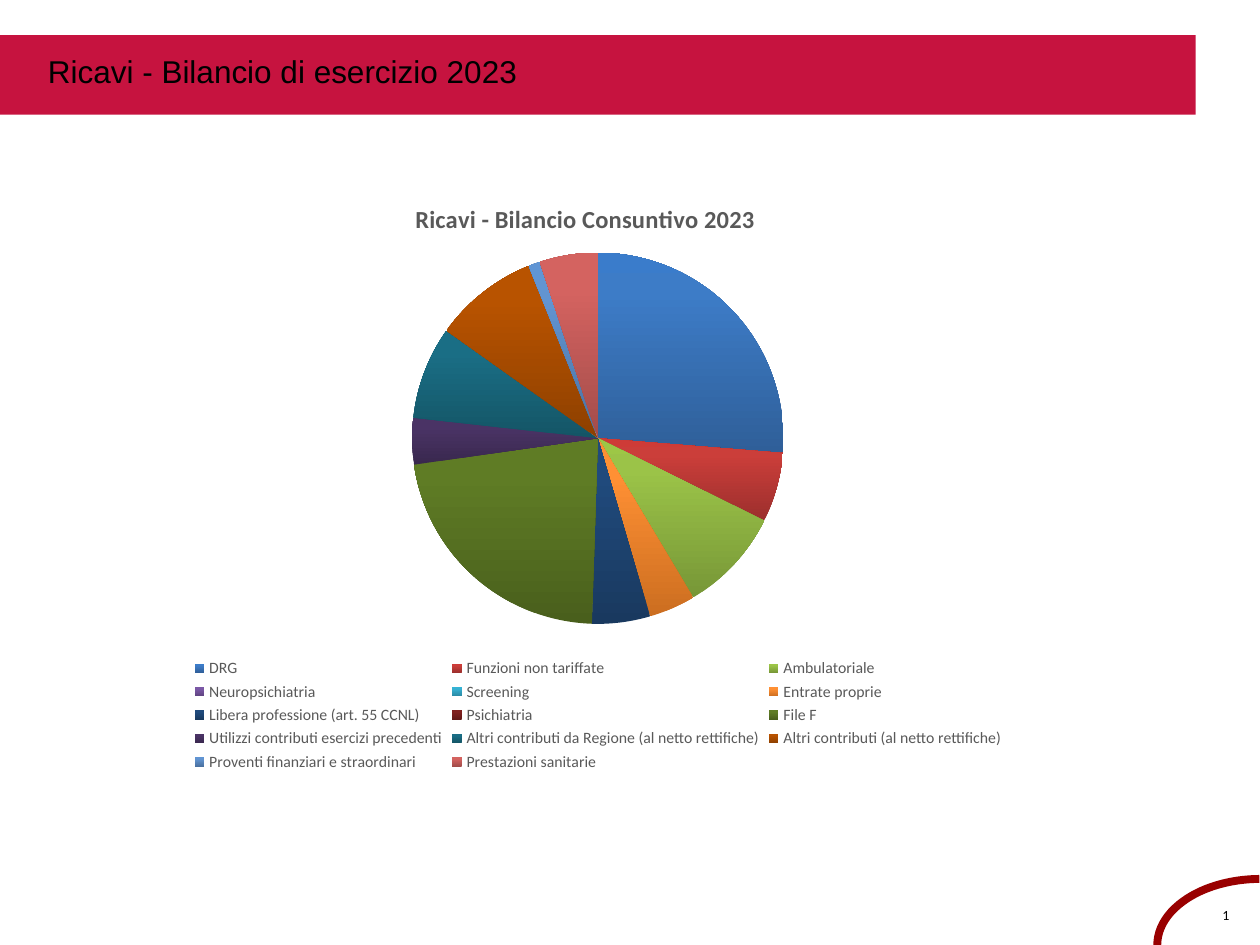
from copy import deepcopy

from lxml import etree
from pptx import Presentation
from pptx.chart.data import CategoryChartData
from pptx.dml.color import RGBColor
from pptx.enum.chart import XL_CHART_TYPE, XL_LEGEND_POSITION
from pptx.enum.shapes import MSO_SHAPE
from pptx.enum.text import MSO_ANCHOR, PP_ALIGN
from pptx.oxml import parse_xml
from pptx.oxml.ns import nsdecls, qn
from pptx.util import Inches, Pt

PIE = XL_CHART_TYPE.PIE
BOTTOM = XL_LEGEND_POSITION.BOTTOM
RECT, ARC = MSO_SHAPE.RECTANGLE, MSO_SHAPE.ARC
TOP, LEFT, CENTER = MSO_ANCHOR.TOP, PP_ALIGN.LEFT, PP_ALIGN.CENTER

THEME = {
    "bar": "C6133F", "arc": "990000", "text": "000000", "muted": "595959",
    "heading_font": "Arial", "body_font": "Calibri",
    "title": 18, "chart_title": 14, "chart": 10, "legend": 9, "page": 8,
}

# Category, value, gradient colours from bottom to top
REVENUES = [
    ("DRG", 26, "2F5F99 3D7CC7 3A7CCB"),
    ("Funzioni non tariffate", 6, "9C2F2D CB3E3A CE3B37"),
    ("Ambulatoriale", 9, "779737 9BC348 9DC746"),
    ("Neuropsichiatria", 0, "5F4480 7B58A6 7C57A8"),
    ("Screening", 0, "2A88A2 37B1D2 34B4D6"),
    ("Entrate proprie", 4, "CC6E20 FF9034 FF9136"),
    ("Libera professione (art. 55 CCNL)", 5, "19395F 204A7C 1E4A7E"),
    ("Psichiatria", 0, "621917 7F201E 811F1C"),
    ("File F", 22, "495F1C 5F7C25 607E23"),
    ("Utilizzi contributi esercizi precedenti", 4, "39284E 4A3365 4A3366"),
    ("Altri contributi da Regione (al netto rettifiche)", 8, "145566 1A6E85 187088"),
    ("Altri contributi (al netto rettifiche)", 9, "8E4000 B85300 B95400"),
    ("Proventi finanziari e straordinari", 1, "4B72A1 6294D1 6095D4"),
    ("Prestazioni sanitarie", 5, "A34C4A D46360 D7615E"),
]
STOPS = (0, 0.8, 1)


def set_font(font, size, color, name=THEME["body_font"], bold=False):
    font.size, font.name, font.bold = Pt(size), name, bold
    font.color.rgb = RGBColor.from_string(color)


def manual_layout(**fractions):
    layout = parse_xml(f"<c:layout {nsdecls('c')}><c:manualLayout/></c:layout>")
    for tag, val in fractions.items():
        etree.SubElement(layout[0], qn(f"c:{tag}")).set("val", str(val))
    return layout


prs = Presentation()
prs.slide_width, prs.slide_height = Inches(10), Inches(7.5)
s = prs.slides.add_slide(prs.slide_layouts[5])

# Corner arc
arc = s.shapes.add_shape(ARC, Inches(9.48), Inches(6.68), Inches(1.05), Inches(1.64))
arc.rotation = 270
arc.adjustments[0], arc.adjustments[1] = 162, 215.34
arc.shadow.inherit = False
arc.fill.background()
arc.line.color.rgb = RGBColor.from_string(THEME["arc"])
arc.line.width = Pt(4.5)

# Page number
page = s.shapes.add_textbox(Inches(9.57), Inches(7.18), Inches(0.32), Inches(0.16))
tf = page.text_frame
tf.word_wrap = True
tf.margin_left = tf.margin_right = tf.margin_bottom = 0
tf.margin_top = Inches(0.03)
p = tf.paragraphs[0]
p.text, p.alignment, p.line_spacing = "1", CENTER, 0.93
set_font(p.font, THEME["page"], THEME["text"])

# Title bar
bar = s.shapes.add_shape(RECT, 0, Inches(0.28), Inches(9.49), Inches(0.63))
bar.shadow.inherit = False
bar.fill.solid()
bar.fill.fore_color.rgb = RGBColor.from_string(THEME["bar"])
bar.line.fill.background()

# Title, placed in front of the bar
title = s.shapes.title
title.left, title.top = Inches(0.28), Inches(0.36)
title.width, title.height = Inches(6.22), Inches(0.71)
bar._element.addnext(title._element)
tf = title.text_frame
tf.vertical_anchor = TOP
p = tf.paragraphs[0]
p.text, p.alignment = "Ricavi - Bilancio di esercizio 2023", LEFT
set_font(p.font, THEME["title"], THEME["text"], THEME["heading_font"])

# Revenue pie chart
data = CategoryChartData()
data.categories = [name for name, _, _ in REVENUES]
data.add_series("Series 1", [value for _, value, _ in REVENUES])
chart = s.shapes.add_chart(PIE, Inches(0.38), Inches(1.33),
                           Inches(8.73), Inches(4.83), data).chart
set_font(chart.font, THEME["chart"], THEME["text"])
plot = chart.plots[0]
plot.vary_by_categories = True

chart.has_title = True
p = chart.chart_title.text_frame.paragraphs[0]
p.text = "Ricavi - Bilancio Consuntivo 2023"
set_font(p.font, THEME["chart_title"], THEME["muted"], bold=True)

chart.has_legend = True
chart.legend.position = BOTTOM
chart.legend.include_in_layout = False
set_font(chart.legend.font, THEME["legend"], THEME["muted"])

# Slice gradients
for i, (_, _, colors) in enumerate(REVENUES):
    point = plot.series[0].points[i]
    fill = point.format.fill
    fill.gradient()
    fill.gradient_angle = 90
    stop_list = chart._chartSpace.xpath(".//c:dPt//a:gsLst")[-1]
    stop_list.append(deepcopy(stop_list[-1]))
    for stop, position, color in zip(fill.gradient_stops, STOPS, colors.split()):
        stop.position = position
        stop.color.rgb = RGBColor.from_string(color)

# Title and pie positions as fractions of the chart
chart_xml = chart._chartSpace.chart
for parent, layout in (
    (chart_xml.find(qn("c:title")),
     manual_layout(xMode="edge", yMode="edge", x=0.33, y=0.05)),
    (chart_xml.plotArea,
     manual_layout(layoutTarget="inner", xMode="edge", yMode="edge",
                   x=0.33, y=0.14, w=0.34, h=0.61)),
):
    for old in parent.findall(qn("c:layout")):
        parent.remove(old)
    text = parent.find(qn("c:tx"))
    if text is None:
        parent.insert(0, layout)
    else:
        text.addnext(layout)

prs.save("out.pptx")
